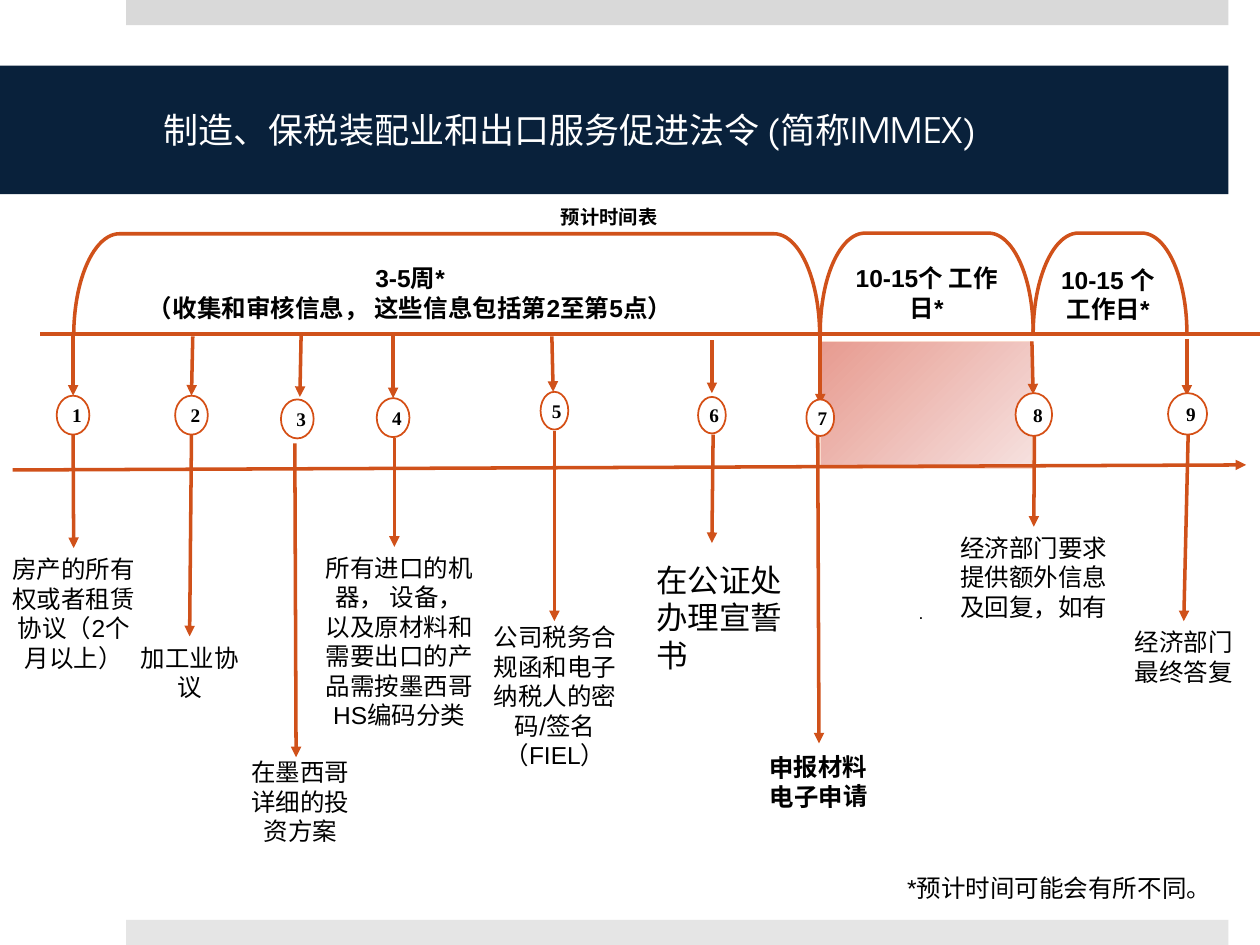
"""Build the IMMEX approval timeline slide."""
from lxml import etree
from pptx import Presentation
from pptx import util as u
from pptx.dml.color import RGBColor
from pptx.enum import shapes, text
from pptx.oxml import ns

COLORS = {
    "navy": "09213B", "white": "FFFFFF", "black": "000000",
    "top_bar": "D9D9D9", "bottom_bar": "E5E5E5",
    "arrow": "D0511A", "ring": "D54F15",
    "wait_from": "E79B90", "wait_to": "F6E1DF", "wait_edge": "F9DBCE",
}
CENTER, LEFT = text.PP_ALIGN.CENTER, text.PP_ALIGN.LEFT

# number, circle box, arrow into circle, arrow out of circle, label, label box, label format
STEPS = [
    ("1", (0.45, 3.14, 0.26, 0.31), (0.58, 2.67, 0.58, 3.14), (0.58, 3.45, 0.59, 4.35),
     "房产的所有权或者租赁协议（2个月以上）", (-0.01, 4.35, 1.19, 1.28), {}),
    ("2", (1.39, 3.14, 0.26, 0.31), (1.53, 2.67, 1.52, 3.14), (1.52, 3.45, 1.51, 5.05),
     "加工业协议", (0.97, 5.05, 1.07, 0.81), {}),
    ("3", (2.23, 3.17, 0.26, 0.31), (2.39, 2.66, 2.38, 3.15), (2.34, 3.52, 2.35, 6.01),
     "在墨西哥详细的投资方案", (1.8, 5.96, 1.17, 0.81), {}),
    ("4", (2.99, 3.16, 0.26, 0.31), (3.12, 2.66, 3.12, 3.16), (3.13, 3.48, 3.13, 4.34),
     "所有进口的机器， 设备， 以及原材料和需要出口的产品需按墨西哥HS编码分类",
     (2.46, 4.34, 1.42, 1.51), {}),
    ("5", (4.29, 3.11, 0.22, 0.3), (4.38, 2.67, 4.39, 3.11), (4.4, 3.42, 4.4, 4.93),
     "公司税务合规函和电子纳税人的密码/签名\n（FIEL）", (3.77, 4.89, 1.27, 1.51), {}),
    ("6", (5.54, 3.15, 0.22, 0.29), (5.65, 2.7, 5.65, 3.12), (5.66, 3.45, 5.65, 4.31),
     "在公证处办理宣誓书", (5.11, 4.4, 1.24, 1.31), {"size": 18, "align": LEFT}),
    ("7", (6.4, 3.17, 0.22, 0.29), (6.51, 2.66, 6.51, 3.21), (6.49, 3.46, 6.5, 5.9),
     "申报材料电子申请", (5.96, 5.92, 1.07, 0.57), {"bold": True, "rotation": 359.2}),
    ("8", (8.06, 3.12, 0.29, 0.34), (8.19, 2.71, 8.2, 3.13), (8.21, 3.46, 8.21, 4.18),
     "经济部门要求提供额外信息及回复，如有", (7.51, 4.18, 1.39, 0.81), {}),
    ("9", (9.27, 3.12, 0.31, 0.33), (9.42, 2.69, 9.42, 3.14), (9.43, 3.45, 9.39, 4.93),
     "经济部门最终答复", (8.81, 4.93, 1.17, 0.57), {}),
]
PHASES = [
    ("3-5周*\n（收集和审核信息， 这些信息包括第2至第5点）", (0.69, 2.04, 5.13, 0.57),
     (3.14, -0.7, 0.81, 5.92)),
    ("10-15个 工作日*", (6.61, 2.04, 1.49, 0.81), (6.96, 1.4, 0.79, 1.69)),
    ("10-15 个工作日*", (8.26, 2.05, 1.07, 0.81), (8.41, 1.64, 0.8, 1.22)),
]


def inches(values):
    return [u.Inches(value) for value in values]


def color(name):
    return RGBColor.from_string(COLORS[name])


def write(frame, content, size=14, bold=False, ink="black", font="Arial", align=CENTER):
    """Fill a text frame, one paragraph per line of content."""
    frame.word_wrap = True
    for index, line in enumerate(content.split("\n")):
        paragraph = frame.add_paragraph() if index else frame.paragraphs[0]
        paragraph.alignment = align
        run = paragraph.add_run()
        run.text = line
        run.font.size, run.font.bold, run.font.name = u.Pt(size), bold, font
        run.font.color.rgb = color(ink)


def add_label(slide, content, box, rotation=0, **style):
    label = slide.shapes.add_textbox(*inches(box))
    label.rotation = rotation
    write(label.text_frame, content, **style)
    label.text_frame.auto_size = text.MSO_AUTO_SIZE.SHAPE_TO_FIT_TEXT
    return label


def add_form(slide, kind, box, fill=None, line=None, width=1):
    form = slide.shapes.add_shape(kind, *inches(box))
    form.shadow.inherit = False
    if fill:
        form.fill.solid()
        form.fill.fore_color.rgb = color(fill)
    else:
        form.fill.background()
    if line:
        form.line.color.rgb = color(line)
        form.line.width = u.Pt(width)
    else:
        form.line.fill.background()
    return form


def add_arrow(slide, ends):
    arrow = slide.shapes.add_connector(shapes.MSO_CONNECTOR.STRAIGHT, *inches(ends))
    arrow.line.color.rgb = color("arrow")
    arrow.line.width = u.Pt(2)
    etree.SubElement(arrow.line._get_or_add_ln(), ns.qn("a:tailEnd"), type="triangle")
    etree.SubElement(arrow._element.spPr, ns.qn("a:effectLst"))
    return arrow


def add_title(slide):
    banner = add_form(slide, shapes.MSO_SHAPE.RECTANGLE, (0, 0.52, 9.75, 1.02), "navy")
    frame = banner.text_frame
    frame.margin_left, frame.margin_right = u.Inches(1.3), u.Inches(0.3)
    frame.vertical_anchor = text.MSO_ANCHOR.MIDDLE
    write(frame, "制造、保税装配业和出口服务促进法令 (简称IMMEX)", size=20,
          ink="white", font="TeX Gyre Adventor", align=LEFT)


def add_waiting_period(slide):
    period = add_form(slide, shapes.MSO_SHAPE.RECTANGLE, (6.51, 2.71, 1.68, 1.01),
                      line="wait_edge")
    period.fill.gradient()
    period.fill.gradient_angle = 315
    for stop, position, name in zip(period.fill.gradient_stops, (0, 1), ("wait_from", "wait_to")):
        stop.position = position
        stop.color.rgb = color(name)


def add_phase(slide, content, box, bracket_box):
    add_label(slide, content, box, bold=True)
    bracket = add_form(slide, shapes.MSO_SHAPE.LEFT_BRACKET, bracket_box, line="arrow", width=2)
    bracket.adjustments[0] = 0.448
    bracket.rotation = 90


def add_step(slide, number, circle_box, arrow_in, arrow_out, content, box, style):
    add_arrow(slide, arrow_in)
    out = add_arrow(slide, arrow_out)
    circle = add_form(slide, shapes.MSO_SHAPE.OVAL, circle_box, "white", "ring")
    circle.text_frame.vertical_anchor = text.MSO_ANCHOR.MIDDLE
    write(circle.text_frame, number, size=11, bold=True, font="Times New Roman")
    label = add_label(slide, content, box, **style)
    middle = box[0] + box[2] / 2
    if max(abs(arrow_out[2] - middle), abs(arrow_out[3] - box[1])) < 0.01:
        out.end_connect(label, 0)


def main():
    deck = Presentation()
    deck.slide_width, deck.slide_height = u.Inches(10), u.Inches(7.5)
    slide = deck.slides.add_slide(deck.slide_layouts[6])
    for top, fill in ((0, "top_bar"), (7.3, "bottom_bar")):
        add_form(slide, shapes.MSO_SHAPE.RECTANGLE, (1, top, 8.75, 0.2), fill)
    add_waiting_period(slide)
    add_title(slide)
    for axis in ((0.1, 3.73, 9.89, 3.69), (0.32, 2.65, 10.09, 2.65)):
        add_arrow(slide, axis)
    add_label(slide, "预计时间表", (2.3, 1.58, 5.07, 0.29), size=11, bold=True)
    for phase in PHASES:
        add_phase(slide, *phase)
    for step in STEPS:
        add_step(slide, *step)
    add_label(slide, ".", (6.68, 4.73, 1.26, 0.27), size=10)
    add_label(slide, "*预计时间可能会有所不同。", (7.1, 6.88, 2.79, 0.34), align=LEFT)
    deck.save("out.pptx")


if __name__ == "__main__":
    main()
